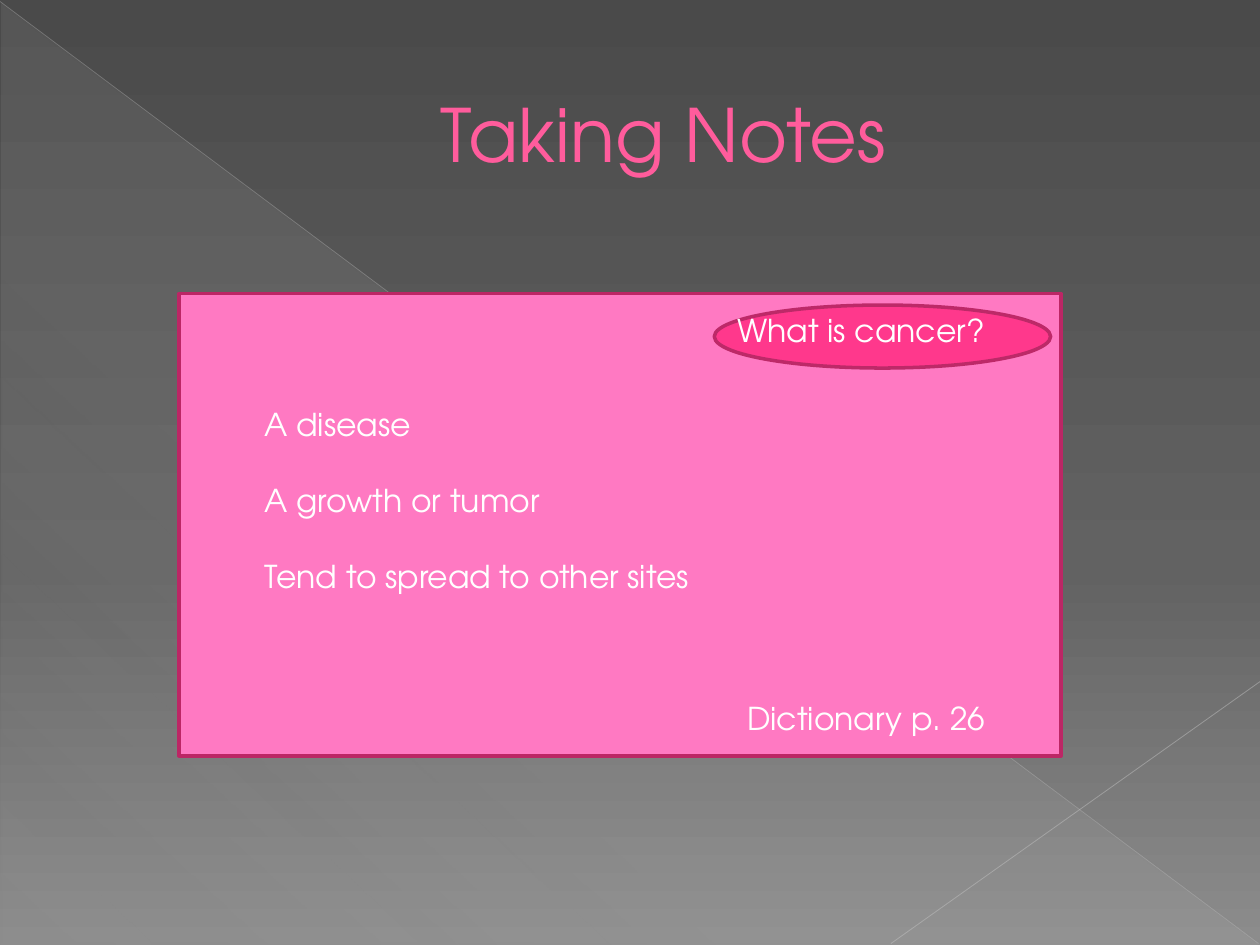
from lxml import etree
from pptx import Presentation
from pptx import util as u
from pptx.dml.color import RGBColor
from pptx.enum import shapes, text
from pptx.oxml import ns

FONT = "TeX Gyre Adventor"
WHITE = "FFFFFF"
TITLE = "Taking Notes"
NOTES = ["A disease", "A growth or tumor", "Tend to spread to other sites"]
TEXTS = [
    (NOTES, (5.08, 8.05, 15.24, 5.59)),
    (["What is cancer?"], (14.61, 6.15, 6.17, 1.02)),
    (["Dictionary p. 26"], (14.81, 13.97, 6.17, 1.02)),
]
PANELS = [
    (shapes.MSO_SHAPE.RECTANGLE, (3.61, 5.92, 17.78, 9.32), "FF79C2", "BC2665"),
    (shapes.MSO_SHAPE.OVAL, (14.4, 6.15, 6.78, 1.27), "FF388C", "BD2968"),
]
DIAGONALS = [
    ((0, 0.03, 25.37, 19.02), "BFBFBF", 0.39, 35),
    ((25.4, 13.74, 17.96, 19.02), "C6C6C6", 0.47, 45),
]
BACKDROP = [(0, "4A4A4A", 100), (60, "626262", 100), (100, "8C8C8C", 100)]
SHEEN = [(0, "D2D2D2", 10), (70, "D2D2D2", 8), (100, "D2D2D2", 1)]


def cm(lengths):
    return [u.Cm(length) for length in lengths]


def color(hex_code):
    return RGBColor.from_string(hex_code)


def set_alpha(srgb, percent):
    etree.SubElement(srgb, ns.qn("a:alpha")).set("val", str(percent * 1000))


def set_gradient(fill, owner, stops, angle):
    fill.gradient()
    fill.gradient_angle = 360 - angle
    stop_list = owner.find(".//" + ns.qn("a:gsLst"))
    for old in list(stop_list):
        stop_list.remove(old)
    for position, hex_code, opacity in stops:
        stop = etree.SubElement(stop_list, ns.qn("a:gs"), pos=str(position * 1000))
        srgb = etree.SubElement(stop, ns.qn("a:srgbClr"), val=hex_code)
        if opacity < 100:
            set_alpha(srgb, opacity)


def style(paragraph, size, hex_code):
    for run in paragraph.runs:
        run.font.name = FONT
        run.font.size = u.Pt(size)
        run.font.color.rgb = color(hex_code)


def add_diagonal(slide, ends, hex_code, width, opacity):
    diagonal = slide.shapes.add_connector(shapes.MSO_CONNECTOR.STRAIGHT, *cm(ends))
    diagonal.line.color.rgb = color(hex_code)
    diagonal.line.width = u.Pt(width)
    properties = diagonal.element.spPr
    set_alpha(properties.find(".//" + ns.qn("a:srgbClr")), opacity)
    etree.SubElement(properties, ns.qn("a:effectLst"))


def add_panel(slide, kind, box, fill, outline):
    panel = slide.shapes.add_shape(kind, *cm(box))
    panel.shadow.inherit = False
    panel.fill.solid()
    panel.fill.fore_color.rgb = color(fill)
    panel.line.color.rgb = color(outline)
    panel.line.width = u.Pt(2)


def add_text(slide, lines, box):
    frame = slide.shapes.add_textbox(*cm(box)).text_frame
    frame.word_wrap = True
    frame.text = "\n".join(lines)
    for paragraph in frame.paragraphs:
        paragraph.space_after = u.Pt(21.6 if len(lines) > 1 else 0)
        style(paragraph, 18, WHITE)


def place_title(slide):
    title = slide.shapes.title
    title.left, title.top, title.width, title.height = cm((1.27, 0.74, 22.86, 3.89))
    title.text_frame.text = TITLE
    title.text_frame.vertical_anchor = text.MSO_ANCHOR.MIDDLE
    heading = title.text_frame.paragraphs[0]
    heading.alignment = text.PP_ALIGN.CENTER
    heading._p.get_or_add_pPr().set("marL", str(u.Cm(1.35)))
    style(heading, 42, "FF5C9C")


def main():
    deck = Presentation()
    deck.slide_width, deck.slide_height = cm((25.4, 19.05))
    slide = deck.slides.add_slide(deck.slide_layouts[5])
    set_gradient(slide.background.fill, slide.element, BACKDROP, 90)

    sheen = slide.shapes.add_shape(
        shapes.MSO_SHAPE.RIGHT_TRIANGLE, *cm((0.03, 0.05, 25.37, 19)))
    sheen.shadow.inherit = False
    sheen.line.fill.background()
    set_gradient(sheen.fill, sheen.element, SHEEN, 133)

    for diagonal in DIAGONALS:
        add_diagonal(slide, *diagonal)
    place_title(slide)
    for panel in PANELS:
        add_panel(slide, *panel)
    for lines, box in TEXTS:
        add_text(slide, lines, box)
    deck.save("out.pptx")


if __name__ == "__main__":
    main()
